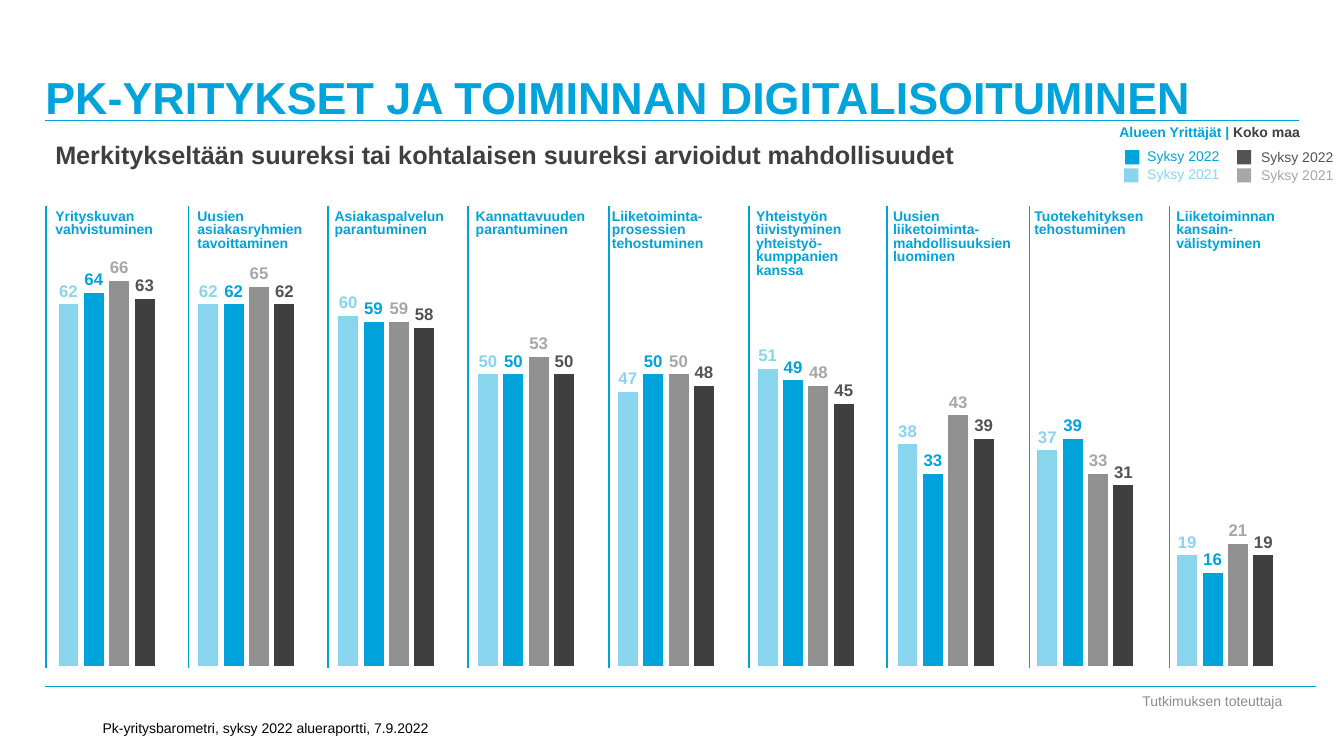
from dataclasses import dataclass

from lxml import etree
from pptx import Presentation
from pptx.chart.data import CategoryChartData
from pptx.dml.color import RGBColor
from pptx.enum.chart import XL_CHART_TYPE as ChartType, XL_LABEL_POSITION as LabelPos
from pptx.enum.shapes import MSO_CONNECTOR as Connector, MSO_SHAPE as Shape
from pptx.enum.text import MSO_ANCHOR as Anchor, PP_ALIGN as Align
from pptx.oxml import parse_xml
from pptx.oxml.ns import nsdecls, qn
from pptx.slide import Slide
from pptx.util import Inches, Pt

FONT = "Arial"
BLUE = RGBColor(0x00, 0xA3, 0xDA)
LIGHT_BLUE = RGBColor(0x8A, 0xD5, 0xEE)
DARK = RGBColor(0x3F, 0x3F, 0x3F)
DARK_GREY = RGBColor(0x53, 0x53, 0x53)
MID_GREY = RGBColor(0x91, 0x91, 0x91)
LIGHT_GREY = RGBColor(0xA7, 0xA7, 0xA7)
FOOTER_GREY = RGBColor(0x8C, 0x8C, 0x8C)
BLACK = RGBColor(0x00, 0x00, 0x00)

COLUMN_TOP, COLUMN_BOTTOM = 2.04, 6.63


@dataclass(frozen=True)
class Run:
    text: str
    color: RGBColor
    size: float = 10
    bold: bool = False


@dataclass(frozen=True)
class Opportunity:
    rule_x: float
    text_x: float
    height: float
    lines: tuple[str, ...]


@dataclass(frozen=True)
class BarSeries:
    name: str
    values: tuple[int, ...]
    fill: RGBColor
    label: RGBColor


@dataclass(frozen=True)
class LegendEntry:
    text: str
    color: RGBColor
    box_x: float
    box_y: float
    text_x: float
    text_y: float


OPPORTUNITIES = [
    Opportunity(0.46, 0.45, 0.37, ("Yrityskuvan vahvistuminen",)),
    Opportunity(1.87, 1.86, 0.5, ("Uusien asiakasryhmien tavoittaminen",)),
    Opportunity(3.25, 3.22, 0.37, ("Asiakaspalvelun parantuminen",)),
    Opportunity(4.64, 4.62, 0.37, ("Kannattavuuden parantuminen",)),
    Opportunity(6.04, 5.97, 0.5, ("Liiketoiminta-prosessien tehostuminen",)),
    Opportunity(7.43, 7.4, 0.77, ("Yhteistyön tiivistyminen yhteistyö-kumppanien kanssa",)),
    Opportunity(8.8, 8.76, 0.64, ("Uusien liiketoiminta-mahdollisuuksien luominen",)),
    Opportunity(10.21, 10.16, 0.37, ("Tuotekehityksen tehostuminen",)),
    Opportunity(11.6, 11.57, 0.5, ("Liiketoiminnan kansain-", "välistyminen")),
]

SERIES = [
    BarSeries("Series 1", (62, 62, 60, 50, 47, 51, 38, 37, 19), LIGHT_BLUE, LIGHT_BLUE),
    BarSeries("Series 2", (64, 62, 59, 50, 50, 49, 33, 39, 16), BLUE, BLUE),
    BarSeries("Series 3", (66, 65, 59, 53, 50, 48, 43, 33, 21), MID_GREY, LIGHT_GREY),
    BarSeries("Series 4", (63, 62, 58, 50, 48, 45, 39, 31, 19), DARK, DARK_GREY),
]

LEGEND = [
    LegendEntry("Syksy 2021", LIGHT_BLUE, 11.15, 1.67, 11.28, 1.59),
    LegendEntry("Syksy 2022", BLUE, 11.16, 1.49, 11.28, 1.41),
    LegendEntry("Syksy 2021", LIGHT_GREY, 12.27, 1.67, 12.41, 1.6),
    LegendEntry("Syksy 2022", DARK_GREY, 12.27, 1.49, 12.41, 1.42),
]


def add_text(slide: Slide, x: float, y: float, w: float, h: float, *paragraphs: list[Run],
             align: Align = Align.LEFT, anchor: Anchor = Anchor.TOP,
             spacing: float = 1.0, wrap: bool = True, inset: bool = True) -> None:
    tf = slide.shapes.add_textbox(Inches(x), Inches(y), Inches(w), Inches(h)).text_frame
    tf.word_wrap = wrap
    tf.vertical_anchor = anchor
    if not inset:
        tf.margin_left = tf.margin_right = tf.margin_top = tf.margin_bottom = 0
    for i, runs in enumerate(paragraphs):
        p = tf.add_paragraph() if i else tf.paragraphs[0]
        p.alignment = align
        p.line_spacing = spacing
        for run in runs:
            r = p.add_run()
            r.text = run.text
            r.font.name = FONT
            r.font.size = Pt(run.size)
            r.font.bold = run.bold
            r.font.color.rgb = run.color


def add_rule(slide: Slide, x1: float, y1: float, x2: float, y2: float, width: float) -> None:
    line = slide.shapes.add_connector(
        Connector.STRAIGHT, Inches(x1), Inches(y1), Inches(x2), Inches(y2))
    line.line.color.rgb = BLUE
    line.line.width = Pt(width)
    etree.SubElement(line._element.spPr, qn("a:effectLst"))


def add_legend_entry(slide: Slide, entry: LegendEntry) -> None:
    sp = slide.shapes.add_shape(Shape.RECTANGLE, Inches(entry.box_x), Inches(entry.box_y),
                                Inches(0.14), Inches(0.14))
    sp.shadow.inherit = False
    sp.fill.solid()
    sp.fill.fore_color.rgb = entry.color
    sp.line.fill.background()
    add_text(slide, entry.text_x, entry.text_y, 0.92, 0.27,
             [Run(entry.text, entry.color)], wrap=False)


def add_bar_chart(slide: Slide) -> None:
    data = CategoryChartData(number_format="#,##0")
    data.categories = [str(n) for n in range(1, len(OPPORTUNITIES) + 1)]
    for bars in SERIES:
        data.add_series(bars.name, bars.values)
    chart = slide.shapes.add_chart(ChartType.COLUMN_CLUSTERED, Inches(0.21), Inches(2.11),
                                   Inches(12.79), Inches(4.61), data).chart
    chart.has_legend = False
    chart.has_title = False
    chart.font.name = FONT
    chart.font.size = Pt(10)
    chart.font.color.rgb = BLACK
    chart.value_axis.minimum_scale = 0
    chart.value_axis.maximum_scale = 70
    chart.value_axis.has_major_gridlines = False
    chart.value_axis.visible = False
    chart.category_axis.visible = False

    plot = chart.plots[0]
    plot.gap_width = 219
    plot.overlap = -27
    plot.vary_by_categories = False
    for series, bars in zip(plot.series, SERIES):
        series.format.fill.solid()
        series.format.fill.fore_color.rgb = bars.fill
        labels = series.data_labels
        labels.show_value = True
        labels.position = LabelPos.OUTSIDE_END
        labels.number_format = "#,##0"
        labels.number_format_is_linked = False
        labels.font.name = FONT
        labels.font.size = Pt(12)
        labels.font.bold = True
        labels.font.color.rgb = bars.label
    set_plot_area(chart, 0.012, 0.097, 0.976, 0.879)


def set_plot_area(chart, x: float, y: float, w: float, h: float) -> None:
    """Fix the inner plot area, in fractions of the chart frame."""
    area = chart._chartSpace.find(".//" + qn("c:plotArea"))
    for old in area.findall(qn("c:layout")):
        area.remove(old)
    area.insert(0, parse_xml(
        f'<c:layout {nsdecls("c")}><c:manualLayout><c:layoutTarget val="inner"/>'
        '<c:xMode val="edge"/><c:yMode val="edge"/>'
        f'<c:x val="{x}"/><c:y val="{y}"/><c:w val="{w}"/><c:h val="{h}"/>'
        '</c:manualLayout></c:layout>'))


def main() -> None:
    prs = Presentation()
    prs.slide_width, prs.slide_height = Inches(13.33), Inches(7.5)
    slide = prs.slides.add_slide(prs.slide_layouts[6])

    add_text(slide, 11.16, 6.82, 1.73, 0.26, [Run("Tutkimuksen toteuttaja", FOOTER_GREY)],
             align=Align.CENTER, anchor=Anchor.MIDDLE)
    add_bar_chart(slide)
    add_text(slide, 0.92, 7, 4.17, 0.35,
             [Run("Pk-yritysbarometri, syksy 2022 alueraportti, 7.9.2022", BLACK)],
             anchor=Anchor.BOTTOM)
    for x1, x2, y in ((0.45, 12.88, 1.2), (0.45, 13.05, 6.81), (0.56, 12.78, 1.2)):
        add_rule(slide, x1, y, x2, y, 0.75)

    add_text(slide, 8.13, 1.18, 4.86, 0.27,
             [Run("Alueen Yrittäjät | ", BLUE, bold=True), Run("Koko maa", DARK, bold=True)],
             align=Align.RIGHT)
    for entry in LEGEND:
        add_legend_entry(slide, entry)

    add_text(slide, 0.45, 1.39, 10.43, 0.34,
             [Run("Merkitykseltään suureksi tai kohtalaisen suureksi arvioidut mahdollisuudet",
                  DARK, 18, True)], spacing=0.8)
    add_text(slide, 0.45, 0, 12.3, 1.22,
             [Run("PK-YRITYKSET JA TOIMINNAN DIGITALISOITUMINEN", BLUE, 32, True)],
             anchor=Anchor.BOTTOM, inset=False)

    for item in OPPORTUNITIES:
        add_text(slide, item.text_x, COLUMN_TOP, 1.42, item.height,
                 *([Run(line, BLUE, bold=True)] for line in item.lines), spacing=0.8)
        add_rule(slide, item.rule_x, COLUMN_TOP, item.rule_x, COLUMN_BOTTOM, 1.25)

    prs.save("out.pptx")


if __name__ == "__main__":
    main()
